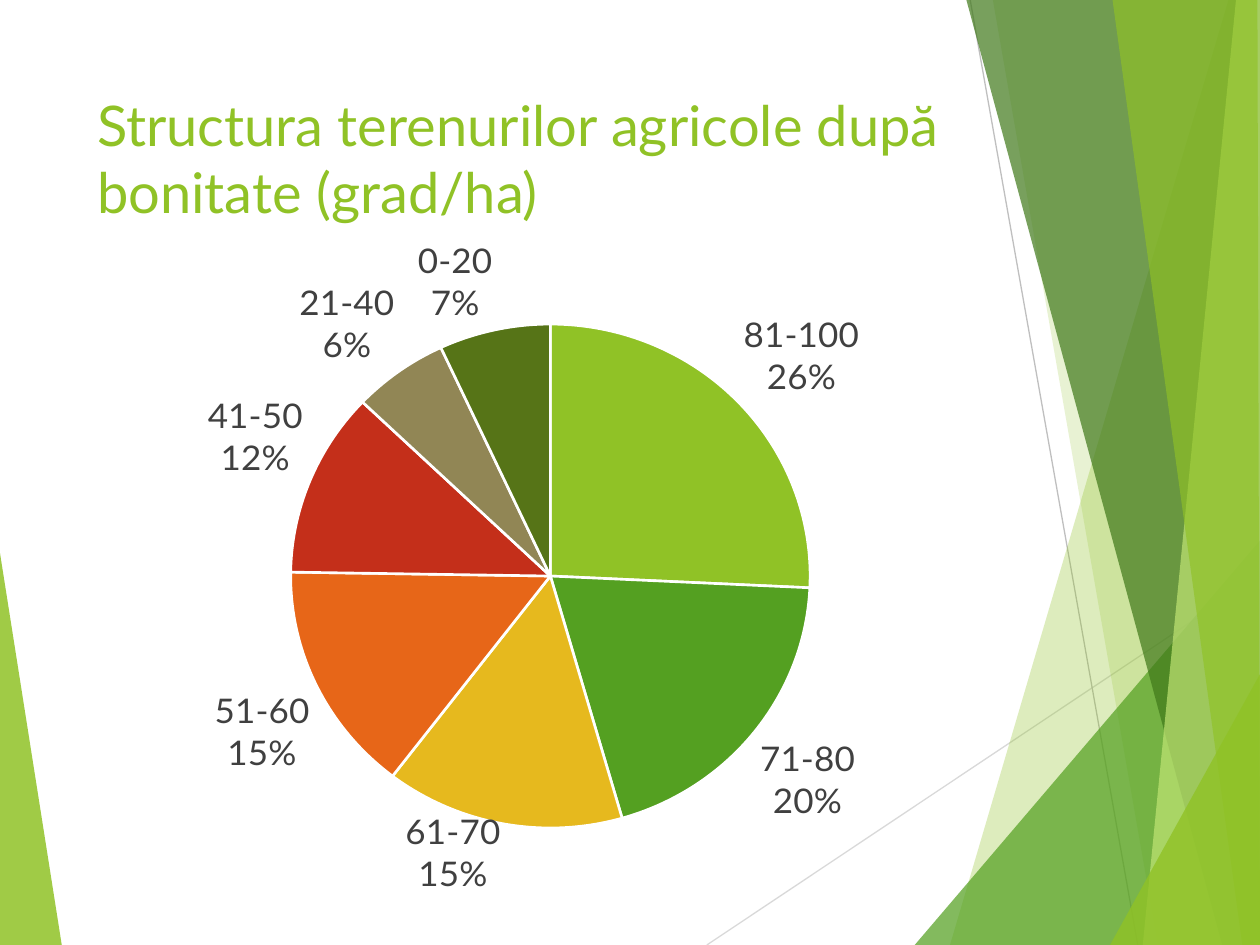
from lxml import etree
from pptx import Presentation
from pptx.chart.data import CategoryChartData
from pptx.dml.color import RGBColor
from pptx.enum.chart import XL_CHART_TYPE, XL_LABEL_POSITION
from pptx.enum.text import MSO_ANCHOR, MSO_AUTO_SIZE, PP_ALIGN
from pptx.oxml import parse_xml
from pptx.oxml.ns import nsdecls, qn
from pptx.util import Inches, Pt

FONT = "Lato"
WIDTH, HEIGHT = 10, 7.5
LIME, GREEN = "90C226", "54A021"

LEFT_FACET = ([(0, 4.39), (0.49, HEIGHT), (0, HEIGHT)], LIME, 85)
RIGHT_FACETS = [
    ([(9.75, 0), (7.54, HEIGHT), (WIDTH, HEIGHT), (WIDTH, 0)], LIME, 30),
    ([(7.88, 0), (9.19, HEIGHT), (WIDTH, HEIGHT), (WIDTH, 0)], LIME, 20),
    ([(7.26, HEIGHT), (WIDTH, 4.29), (WIDTH, HEIGHT)], GREEN, 72),
    ([(7.67, 0), (9.7, HEIGHT), (WIDTH, HEIGHT), (WIDTH, 0)], "3F7819", 70),
    ([(9.81, 0), (9.07, HEIGHT), (WIDTH, HEIGHT), (WIDTH, 0)], "C0E474", 70),
    ([(8.83, 0), (9.86, HEIGHT), (WIDTH, HEIGHT), (9.98, 0)], LIME, 65),
    ([(8.81, HEIGHT), (WIDTH, 5.35), (WIDTH, HEIGHT)], LIME, 80),
]
RAYS = [
    ((5.61, HEIGHT), (WIDTH, 4.57), "D9D9D9"),
    ((7.7, 0), (9.03, HEIGHT), "BFBFBF"),
]
LAND_GRADES = [
    ("81-100", 26, LIME),
    ("71-80", 20, GREEN),
    ("61-70", 15, "E6B91E"),
    ("51-60", 15, "E76618"),
    ("41-50", 12, "C42F1A"),
    ("21-40", 6, "918655"),
    ("0-20", 7, "567417"),
]


def paint(color_format, color):
    color_format.rgb = RGBColor.from_string(color)


def add_facet(page, points, color, opacity):
    corners = [(Inches(x), Inches(y)) for x, y in points]
    builder = page.shapes.build_freeform(*corners[0])
    builder.add_line_segments(corners[1:], close=True)
    facet = builder.convert_to_shape()
    facet.shadow.inherit = False
    facet.line.fill.background()
    facet.fill.solid()
    paint(facet.fill.fore_color, color)
    tint = facet.fill._xPr.find(".//" + qn("a:srgbClr"))
    etree.SubElement(tint, qn("a:alpha"), val=str(opacity * 1000))


def add_ray(page, start, end, color):
    ends = [Inches(value) for value in (*start, *end)]
    ray = page.shapes.add_connector(1, *ends)
    ray.line.width = Pt(0.75)
    paint(ray.line.color, color)
    etree.SubElement(ray._element.spPr, qn("a:effectLst"))


def add_backdrop(page):
    add_facet(page, *LEFT_FACET)
    for ray in RAYS:
        add_ray(page, *ray)
    for facet in RIGHT_FACETS:
        add_facet(page, *facet)


def add_title(page, text, left, top, width, height):
    title = page.shapes.title
    title.left, title.top = Inches(left), Inches(top)
    title.width, title.height = Inches(width), Inches(height)
    frame = title.text_frame
    frame.text = text
    frame.word_wrap = True
    frame.auto_size = MSO_AUTO_SIZE.NONE
    frame.vertical_anchor = MSO_ANCHOR.TOP
    para = frame.paragraphs[0]
    para.alignment = PP_ALIGN.LEFT
    para.font.name, para.font.size = FONT, Pt(32)
    paint(para.font.color, LIME)


def set_plot_box(chart, left, top, width, height):
    plot_area = chart._chartSpace.chart.plotArea
    for layout in plot_area.findall(qn("c:layout")):
        plot_area.remove(layout)
    sizes = {"x": left, "y": top, "w": width, "h": height}
    parts = "".join(f'<c:{key} val="{value}"/>' for key, value in sizes.items())
    plot_area.insert(0, parse_xml(
        f'<c:layout {nsdecls("c")}><c:manualLayout><c:layoutTarget val="inner"/>'
        f'<c:xMode val="edge"/><c:yMode val="edge"/>{parts}'
        '</c:manualLayout></c:layout>'))


def format_labels(labels):
    labels.show_category_name = True
    labels.show_percentage = True
    labels.show_value = False
    labels.position = XL_LABEL_POSITION.OUTSIDE_END
    labels.font.name, labels.font.size = FONT, Pt(20)
    paint(labels.font.color, "404040")
    separator = parse_xml(f'<c:separator {nsdecls("c")}>\n</c:separator>')
    labels._element.find(qn("c:showBubbleSize")).addnext(separator)


def add_grade_chart(page, left, top, width, height):
    names, shares, colors = zip(*LAND_GRADES)
    data = CategoryChartData()
    data.categories = names
    data.add_series("Series 1", shares)
    box = [Inches(value) for value in (left, top, width, height)]
    chart = page.shapes.add_chart(XL_CHART_TYPE.PIE, *box, data).chart
    chart.has_legend = False
    chart.has_title = False
    chart.font.name, chart.font.size = FONT, Pt(10)
    set_plot_box(chart, 0.24, 0.13, 0.53, 0.77)
    plot = chart.plots[0]
    plot.vary_by_categories = True
    plot.has_data_labels = True
    format_labels(plot.data_labels)
    for index, color in enumerate(colors):
        slice_format = plot.series[0].points[index].format
        slice_format.fill.solid()
        paint(slice_format.fill.fore_color, color)
        slice_format.line.width = Pt(1.5)
        paint(slice_format.line.color, "FFFFFF")


def main():
    deck = Presentation()
    deck.slide_width, deck.slide_height = Inches(WIDTH), Inches(HEIGHT)
    page = deck.slides.add_slide(deck.slide_layouts[5])
    add_backdrop(page)
    add_title(page, "Structura terenurilor agricole după bonitate (grad/ha)",
              0.67, 0.67, 6.94, 1.44)
    add_grade_chart(page, 0.44, 1.89, 7.78, 5.37)
    deck.save("out.pptx")


if __name__ == "__main__":
    main()
